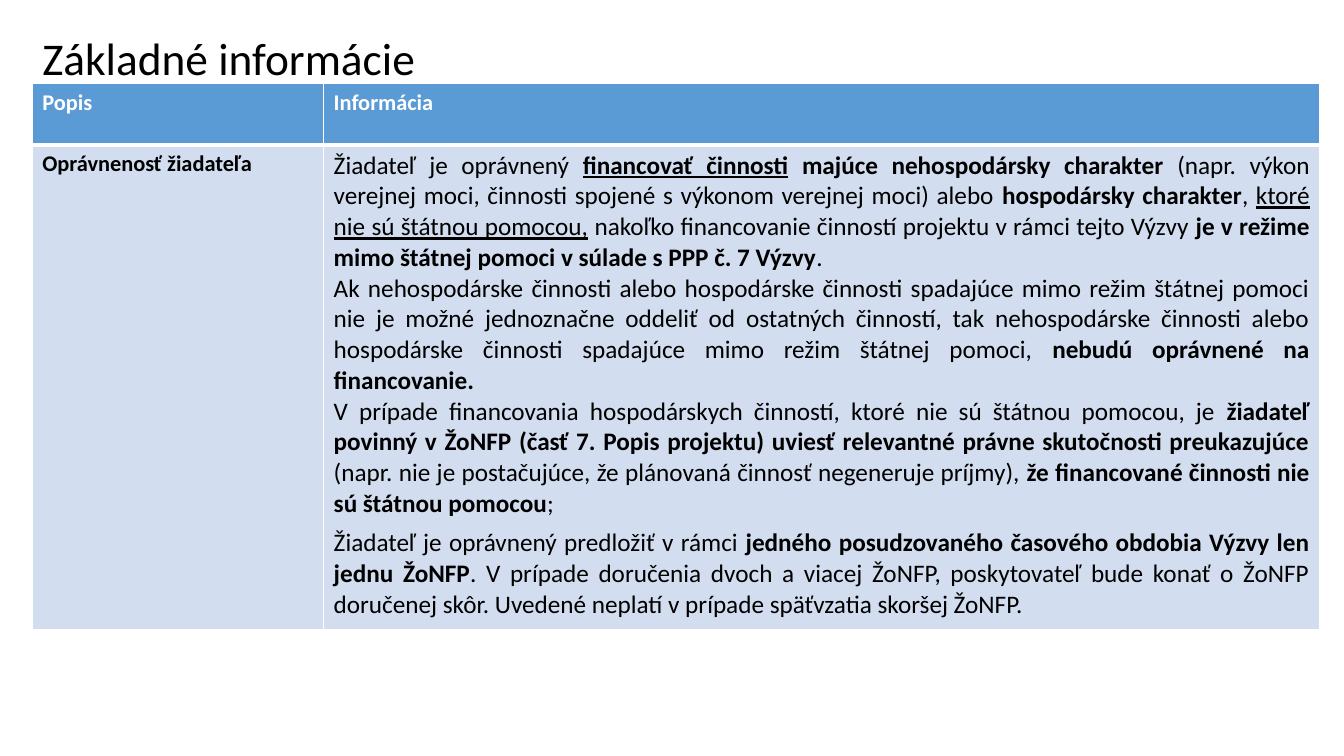
import pptx
import pptx.dml.color
import pptx.enum.text
import pptx.oxml
import pptx.util
from pptx.util import Inches

WHITE, BLACK, BLUE, PALE = "FFFFFF", "000000", "5B9BD5", "D2DEEF"
NS = "http://schemas.openxmlformats.org/drawingml/2006/main"

# Each paragraph is a list of (text, style); style holds "b" for bold, "u" for underline.
RULES = [
    [("Žiadateľ je oprávnený ", ""),
     ("financovať činnosti", "bu"),
     (" majúce nehospodársky charakter", "b"),
     (" (napr. výkon verejnej moci, činnosti spojené s výkonom verejnej moci) alebo ", ""),
     ("hospodársky charakter", "b"),
     (", ", ""),
     ("ktoré nie sú štátnou pomocou,", "u"),
     (" nakoľko financovanie činností projektu v rámci tejto Výzvy ", ""),
     ("je v režime mimo štátnej pomoci v súlade s PPP č. 7 Výzvy", "b"),
     (". ", "")],
    [("Ak nehospodárske činnosti alebo hospodárske činnosti spadajúce mimo režim "
      "štátnej pomoci nie je možné jednoznačne oddeliť od ostatných činností, tak "
      "nehospodárske činnosti alebo hospodárske činnosti spadajúce mimo režim "
      "štátnej pomoci, ", ""),
     ("nebudú oprávnené na financovanie. ", "b")],
    [("V prípade financovania hospodárskych činností, ktoré nie sú štátnou pomocou, je ", ""),
     ("žiadateľ povinný v ŽoNFP (časť 7. Popis projektu) uviesť relevantné právne "
      "skutočnosti preukazujúce", "b"),
     (" (napr. nie je postačujúce, že plánovaná činnosť negeneruje príjmy), ", ""),
     ("že financované činnosti nie sú štátnou pomocou", "b"),
     (";", "")],
    [("Žiadateľ je oprávnený predložiť v rámci ", ""),
     ("jedného posudzovaného časového obdobia Výzvy len jednu ŽoNFP", "b"),
     (". V prípade doručenia dvoch a viacej ŽoNFP, poskytovateľ bude konať o ŽoNFP "
      "doručenej skôr. Uvedené neplatí v prípade späťvzatia skoršej ŽoNFP.", "")],
]


def color(code):
    return pptx.dml.color.RGBColor.from_string(code)


class Page:
    def __init__(self, deck, font="Calibri"):
        self.font = font
        self.slide = deck.slides.add_slide(deck.slide_layouts[5])

    def style(self, run, size, tint, marks=""):
        font = run.font
        font.name, font.size = self.font, pptx.util.Pt(size)
        font.color.rgb = color(tint)
        font.bold, font.underline = "b" in marks, "u" in marks

    def runs(self, para, parts, size, tint):
        """Add one run for each (text, marks) pair."""
        for text, marks in parts:
            run = para.add_run()
            run.text = text
            self.style(run, size, tint, marks)

    def title(self, text, box, size):
        shape = self.slide.shapes.title
        shape.left, shape.top, shape.width, shape.height = map(Inches, box)
        frame = shape.text_frame
        frame.word_wrap = True
        frame.auto_size = pptx.enum.text.MSO_AUTO_SIZE.NONE
        frame.vertical_anchor = pptx.enum.text.MSO_ANCHOR.MIDDLE
        para = frame.paragraphs[0]
        para.alignment = pptx.enum.text.PP_ALIGN.LEFT
        para.line_spacing = 0.9
        self.runs(para, [(text, "")], size, BLACK)
        self.runs(para, [(" ", "")], 39.6, BLACK)

    def table(self, left, top, cols, rows):
        grid = self.slide.shapes.add_table(
            len(rows), len(cols), Inches(left), Inches(top),
            Inches(sum(cols)), Inches(sum(rows))).table
        for col, width in zip(grid.columns, cols):
            col.width = Inches(width)
        for row, height in zip(grid.rows, rows):
            row.height = Inches(height)
        return grid

    def cell(self, cell, paras, size, tint, fill, edges):
        """Fill a cell with paragraphs; edges gives line widths in points by side."""
        props = cell._tc.get_or_add_tcPr()
        for side, width in edges.items():
            props.append(pptx.oxml.parse_xml(
                f'<a:ln{side} xmlns:a="{NS}" w="{width * 12700}"><a:solidFill>'
                f'<a:srgbClr val="{WHITE}"/></a:solidFill></a:ln{side}>'))
        cell.fill.solid()
        cell.fill.fore_color.rgb = color(fill)
        frame = cell.text_frame
        for i, parts in enumerate(paras):
            para = frame.add_paragraph() if i else frame.paragraphs[0]
            self.runs(para, parts, size, tint)
        return frame.paragraphs


def main():
    deck = pptx.Presentation()
    deck.slide_width, deck.slide_height = Inches(13.33), Inches(7.5)
    page = Page(deck)
    page.title("Základné informácie", (0.32, 0.32, 10, 0.51), 32.4)

    grid = page.table(0.32, 0.83, (2.89, 9.88), (0.61, 4.81))
    head = {"L": 1, "R": 1, "T": 1, "B": 3}
    body = {"L": 1, "R": 1, "T": 3, "B": 1}
    for i, label in enumerate(("Popis", "Informácia")):
        page.cell(grid.cell(0, i), [[(label, "b")]], 16, WHITE, BLUE, head)
    page.cell(grid.cell(1, 0), [[("Oprávnenosť žiadateľa", "b")]], 16, BLACK, PALE, body)
    paras = page.cell(grid.cell(1, 1), RULES, 18, BLACK, PALE, body)
    for para in paras:
        para.alignment = pptx.enum.text.PP_ALIGN.JUSTIFY
    paras[2].space_after = pptx.util.Pt(6)
    deck.save("out.pptx")


if __name__ == "__main__":
    main()
